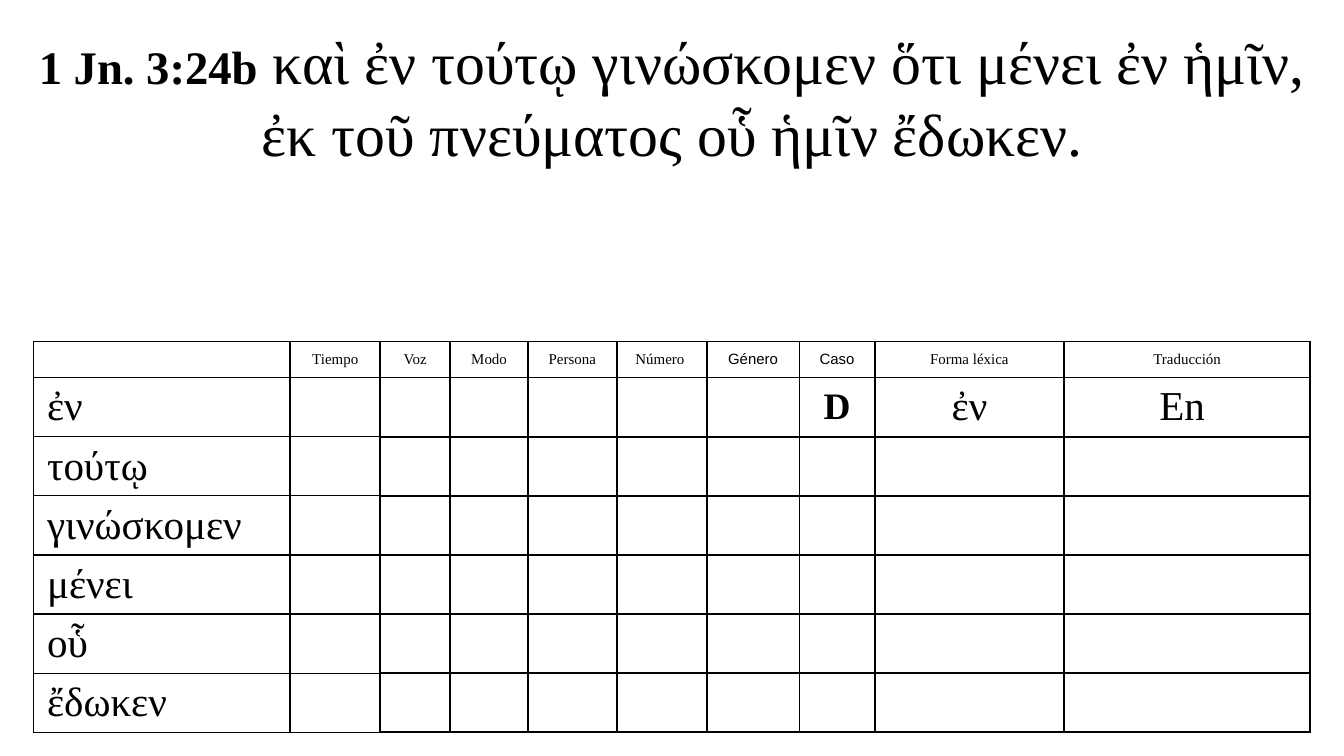
from lxml import etree
from pptx import Presentation
from pptx.dml.color import RGBColor
from pptx.enum.text import MSO_ANCHOR, MSO_AUTO_SIZE, PP_ALIGN
from pptx.oxml.ns import qn
from pptx.util import Inches, Pt

LEFT, CENTER = PP_ALIGN.LEFT, PP_ALIGN.CENTER
MIDDLE = MSO_ANCHOR.MIDDLE
NO_FIT = MSO_AUTO_SIZE.NONE
TITLE_ONLY = 5
SERIF, SANS = "Times New Roman", "Arial"
BLACK = "000000"

VERSE = "καὶ ἐν τούτῳ γινώσκομεν ὅτι μένει ἐν ἡμῖν, ἐκ τοῦ πνεύματος οὗ ἡμῖν ἔδωκεν."
HEADS = ["", "Tiempo", "Voz", "Modo", "Persona", "Número ", "Género", "Caso",
         "Forma léxica", "Traducción"]
SANS_HEADS = {"Género", "Caso"}
WORDS = ["ἐν", "τούτῳ", "γινώσκομεν", "μένει", "οὗ", "ἔδωκεν"]
# Answers already filled in, by row and column
KNOWN = {(1, 7): ("D", 20, True), (1, 8): ("ἐν", 22, False), (1, 9): ("En ", 22, False)}
WIDTHS = [1.91, 0.67, 0.52, 0.58, 0.66, 0.67, 0.69, 0.56, 1.41, 1.83]
HEAD_H, WORD_H = 0.27, 0.44


def color(code):
    return RGBColor.from_string(code)


def write(para, text, size, font=SERIF, bold=False, align=LEFT):
    """Add a run; an empty text only sets the height of the line."""
    para.alignment = align
    if not text:
        end = etree.SubElement(para._p, qn("a:endParaRPr"))
        end.set("sz", str(size * 100))
        return
    run = para.add_run()
    run.text = text
    run.font.size = Pt(size)
    run.font.name = font
    run.font.bold = bold
    run.font.color.rgb = color(BLACK)


def edge(cell, widths):
    """Draw the left, right, top and bottom borders, in that order."""
    props = cell._tc.get_or_add_tcPr()
    for index, (side, width) in enumerate(zip("LRTB", widths)):
        line = etree.Element(qn(f"a:ln{side}"), w=str(Pt(width)))
        fill = etree.SubElement(line, qn("a:solidFill"))
        etree.SubElement(fill, qn("a:srgbClr"), val=BLACK)
        props.insert(index, line)


def add_verse(slide, left, top, width, height):
    title = slide.shapes.title
    title.left, title.top = Inches(left), Inches(top)
    title.width, title.height = Inches(width), Inches(height)
    frame = title.text_frame
    frame.word_wrap = True
    frame.auto_size = NO_FIT
    frame.vertical_anchor = MIDDLE
    para = frame.paragraphs[0]
    write(para, "1 Jn. 3:24b", 25, bold=True, align=CENTER)
    write(para, " " + VERSE, 32, align=CENTER)


def fill_cell(cell, row, col):
    cell.fill.background()
    cell.vertical_anchor = MIDDLE
    cell.margin_left = cell.margin_right = Inches(0.1)
    cell.margin_top = cell.margin_bottom = Inches(0.04)
    para = cell.text_frame.paragraphs[0]
    if row == 0:
        head = HEADS[col]
        font = SANS if head in SANS_HEADS else SERIF
        write(para, head, 8, font=font, align=CENTER)
    elif col == 0:
        write(para, WORDS[row - 1], 22)
    else:
        text, size, bold = KNOWN.get((row, col), ("", 18, False))
        write(para, text, size, bold=bold, align=CENTER)
    thin = 0.75 if col < 2 else 1
    edge(cell, (1, 1, thin if row else 1, thin))


def add_parsing(slide, left, top, width, height):
    """Add the table in which each word is parsed."""
    shape = slide.shapes.add_table(len(WORDS) + 1, len(HEADS), Inches(left),
                                   Inches(top), Inches(width), Inches(height))
    table = shape.table
    table.first_row = table.horz_banding = False
    for col, size in enumerate(WIDTHS):
        table.columns[col].width = Inches(size)
    for row in range(len(WORDS) + 1):
        table.rows[row].height = Inches(WORD_H if row else HEAD_H)
        for col in range(len(HEADS)):
            fill_cell(table.cell(row, col), row, col)


def main():
    deck = Presentation()
    deck.slide_width = Inches(10)
    deck.slide_height = deck.slide_width * 9 // 16
    slide = deck.slides.add_slide(deck.slide_layouts[TITLE_ONLY])
    slide.background.fill.solid()
    slide.background.fill.fore_color.rgb = color("FFFFFF")
    add_verse(slide, 0.17, 0.13, 9.67, 1.18)
    add_parsing(slide, 0.25, 2.54, sum(WIDTHS), HEAD_H + WORD_H * len(WORDS))
    deck.save("out.pptx")


if __name__ == "__main__":
    main()
